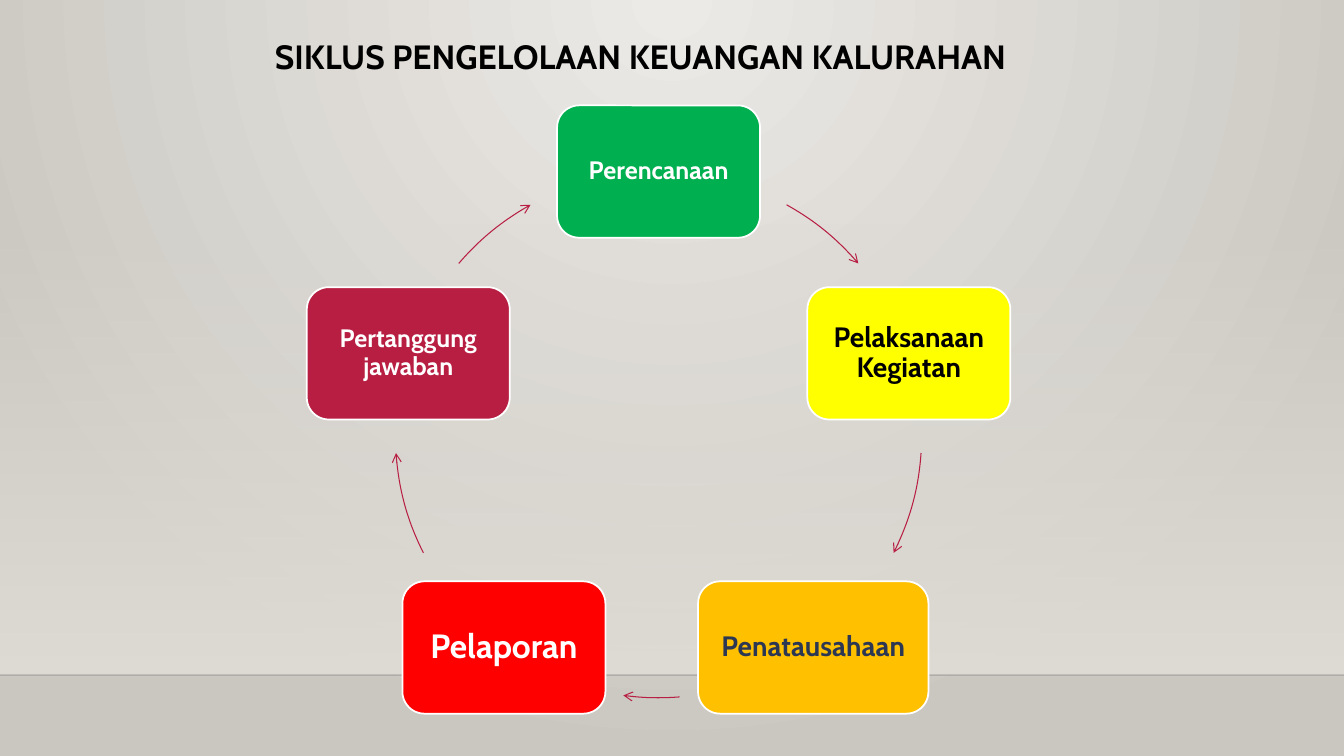
"""Draw the five-step cycle of village finance on one slide."""
from math import cos, radians, sin

from lxml import etree
from pptx import Presentation
from pptx.dml.color import RGBColor
from pptx.enum.shapes import MSO_CONNECTOR, MSO_SHAPE
from pptx.enum.text import MSO_ANCHOR, MSO_AUTO_SIZE, PP_ALIGN
from pptx.oxml.ns import qn
from pptx.util import Inches, Pt

RECT = MSO_SHAPE.RECTANGLE
ROUND = MSO_SHAPE.ROUNDED_RECTANGLE
ARC = MSO_SHAPE.ARC
STRAIGHT = MSO_CONNECTOR.STRAIGHT
CENTER = PP_ALIGN.CENTER
MIDDLE = MSO_ANCHOR.MIDDLE
GROW = MSO_AUTO_SIZE.SHAPE_TO_FIT_TEXT

BLACK = RGBColor(0x00, 0x00, 0x00)
WHITE = RGBColor(0xFF, 0xFF, 0xFF)
NAVY = RGBColor(0x2C, 0x37, 0x53)
GREEN = RGBColor(0x00, 0xB0, 0x50)
YELLOW = RGBColor(0xFF, 0xFF, 0x00)
AMBER = RGBColor(0xFF, 0xC0, 0x00)
RED = RGBColor(0xFF, 0x00, 0x00)
WINE = RGBColor(0xB7, 0x1E, 0x42)
PALE = RGBColor(0xEC, 0xEA, 0xE7)
STONE = RGBColor(0xCA, 0xC7, 0xC1)
SAND = RGBColor(0xDF, 0xDB, 0xD5)

FONT = "Cabin"
WIDE, HIGH = Inches(13.33), Inches(7.5)
MID_X, MID_Y = 0.49 * WIDE, 0.575 * HIGH
RADIUS = 0.348 * HIGH
BOX_W, BOX_H = 0.151 * WIDE, 0.175 * HIGH
FLOOR = 0.893 * HIGH

STEPS = [
    ("Perencanaan", GREEN, WHITE, 18, 1),
    ("Pelaksanaan Kegiatan", YELLOW, BLACK, 20, 1),
    ("Penatausahaan", AMBER, NAVY, 20, 1.135),
    ("Pelaporan", RED, WHITE, 24, 1),
    ("Pertanggung jawaban", WINE, WHITE, 18, 1),
]
ARCS = [(299.1, 319.4), (4, 26.7), (85.4, 97.7), (153.3, 176), (220.6, 240.9)]


def add_tag(parent, tag, **attrs):
    """Append an XML element with the given attributes."""
    node = etree.SubElement(parent, qn(tag))
    for key, value in attrs.items():
        node.set(key, str(value))
    return node


def put_text(frame, text, size, color, space=1.0):
    """Write one bold, centred paragraph into a text frame."""
    frame.word_wrap = True
    para = frame.paragraphs[0]
    para.alignment = CENTER
    para.line_spacing = space
    run = para.add_run()
    run.text = text
    run.font.name, run.font.size, run.font.bold = FONT, Pt(size), True
    run.font.color.rgb = color


def add_form(slide, kind, x, y, w, h):
    """Add a preset shape without shadow."""
    form = slide.shapes.add_shape(kind, *map(round, (x, y, w, h)))
    form.shadow.inherit = False
    return form


def blend(fill, first, last):
    """Turn a fill into a gradient of two colours, running downwards."""
    fill.gradient()
    fill.gradient_angle = 270
    for stop, color, place in zip(fill.gradient_stops, (first, last), (0, 1)):
        stop.color.rgb = color
        stop.position = place


def add_scene(slide):
    """Paint the backdrop, the wall and the floor line."""
    blend(slide.background.fill, PALE, STONE)
    grad = next(slide.element.iter(qn("a:gradFill")))
    grad.remove(grad.find(qn("a:lin")))
    glow = add_tag(grad, "a:path", path="circle")
    add_tag(glow, "a:fillToRect", l=43000, t=0, r=43000, b=100000)

    top = 0.295 * HIGH
    wall = add_form(slide, RECT, 0, top, WIDE, FLOOR - top)
    blend(wall.fill, SAND, SAND)
    wall.line.fill.background()
    add_tag(next(wall.element.iter(qn("a:srgbClr"))), "a:alpha", val=0)

    edge = slide.shapes.add_connector(STRAIGHT, 0, round(FLOOR), WIDE, round(FLOOR))
    edge.line.color.rgb, edge.line.width = BLACK, Pt(1)
    add_tag(next(edge.element.iter(qn("a:srgbClr"))), "a:alpha", val=20000)
    add_tag(edge.element.spPr, "a:effectLst")


def add_title(slide, text):
    """Add the heading above the cycle."""
    area = (0.0465 * WIDE, 0.041 * HIGH, 0.86 * WIDE, 0.067 * HIGH)
    box = slide.shapes.add_textbox(*map(round, area))
    put_text(box.text_frame, text, 24, BLACK)
    box.text_frame.auto_size = GROW


def add_step(slide, turn, text, fill, ink, size, scale):
    """Add one step box on the ring at the given angle."""
    x = MID_X + RADIUS * cos(radians(turn))
    y = MID_Y + RADIUS * sin(radians(turn))
    w = BOX_W * scale
    box = add_form(slide, ROUND, x - w / 2, y - BOX_H / 2, w, BOX_H)
    box.fill.solid()
    box.fill.fore_color.rgb = fill
    box.line.color.rgb, box.line.width = WHITE, Pt(1.25)
    frame = box.text_frame
    frame.vertical_anchor = MIDDLE
    frame.margin_left = frame.margin_right = Pt(0.3 * size)
    frame.margin_top = frame.margin_bottom = Pt(0.3 * size)
    put_text(frame, text, size, ink, space=0.9)


def add_arc(slide, start, end):
    """Add a curved arrow along the ring between two angles."""
    side = 2 * RADIUS
    arc = add_form(slide, ARC, MID_X - RADIUS, MID_Y - RADIUS, side, side)
    arc.fill.background()
    arc.line.color.rgb, arc.line.width = WINE, Pt(0.75)
    for i, angle in enumerate((start, end)):
        arc.adjustments[i] = angle * 0.6
    add_tag(arc.element.spPr.find(qn("a:ln")), "a:tailEnd", type="arrow")


def main():
    """Build the slide and save it."""
    deck = Presentation()
    deck.slide_width, deck.slide_height = WIDE, HIGH
    slide = deck.slides.add_slide(deck.slide_layouts[6])
    add_scene(slide)
    add_title(slide, "SIKLUS PENGELOLAAN KEUANGAN KALURAHAN")
    for i, (step, ends) in enumerate(zip(STEPS, ARCS)):
        add_step(slide, 360 / len(STEPS) * i - 90, *step)
        add_arc(slide, *ends)
    deck.save("out.pptx")


if __name__ == "__main__":
    main()
